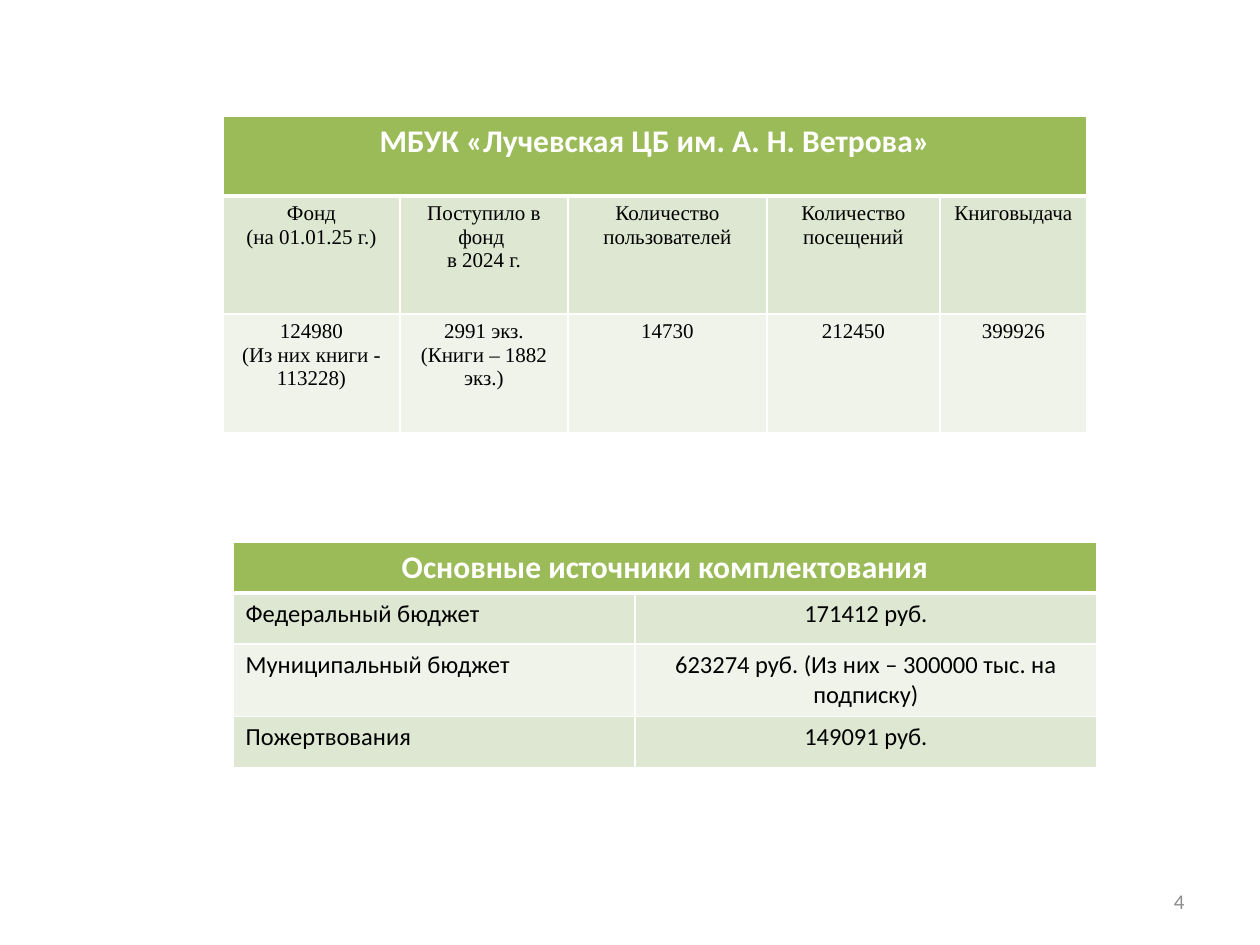
from lxml.etree import SubElement
from pptx import Presentation
from pptx.dml.color import RGBColor as RGB
from pptx.enum.text import MSO_ANCHOR as Anchor, PP_ALIGN as Align
from pptx.oxml.ns import qn
from pptx.util import Pt

PX = 914400 / 126
COLORS = {
    "header": "9BBB59", "odd": "DEE7D1", "even": "EFF3EA",
    "line": "FFFFFF", "light": "FFFFFF", "dark": "000000", "number": "8C8C8C",
}
HEADING = {"name": "Calibri", "size": Pt(18), "bold": True}
STATISTIC = {"name": "Times New Roman", "size": Pt(12), "bold": False}
SOURCE = {"name": "Calibri", "size": Pt(14), "bold": False}
NUMBER = {"name": "Calibri", "size": Pt(12), "bold": False}


def emu(px):
    return round(px * PX)


def write(frame, text, style, color, align):
    """Fill a text frame, one paragraph for each line of text."""
    for index, line in enumerate(text.split("\n")):
        paragraph = frame.add_paragraph() if index else frame.paragraphs[0]
        paragraph.alignment = align
        run = paragraph.add_run()
        run.text = line
        for key, value in style.items():
            setattr(run.font, key, value)
        run.font.color.rgb = RGB.from_string(COLORS[color])


def add_borders(cell, row):
    """White cell edges, with a thick rule under the heading row."""
    widths = {"L": 1, "R": 1, "T": 3 if row == 1 else 1, "B": 3 if row == 0 else 1}
    properties = cell._tc.get_or_add_tcPr()
    for place, (side, width) in enumerate(widths.items()):
        edge = SubElement(properties, qn(f"a:ln{side}"), w=str(Pt(width)))
        fill = SubElement(edge, qn("a:solidFill"))
        SubElement(fill, qn("a:srgbClr"), val=COLORS["line"])
        properties.insert(place, edge)


def add_banded_table(slide, box, widths, heights, heading, body, style, aligns):
    """Table with one merged heading row above banded rows."""
    table = slide.shapes.add_table(
        len(heights), len(widths), *map(emu, box)).table
    for column, width in zip(table.columns, widths):
        column.width = emu(width)
    for row, height in zip(table.rows, heights):
        row.height = emu(height)

    # Fills and edges
    for r in range(len(heights)):
        band = "header" if r == 0 else "odd" if r % 2 else "even"
        for c in range(len(widths)):
            cell = table.cell(r, c)
            cell.fill.solid()
            cell.fill.fore_color.rgb = RGB.from_string(COLORS[band])
            add_borders(cell, r)

    # Wording
    table.cell(0, 0).merge(table.cell(0, len(widths) - 1))
    write(table.cell(0, 0).text_frame, heading, HEADING, "light", Align.CENTER)
    for r, texts in enumerate(body, 1):
        for c, (text, align) in enumerate(zip(texts, aligns)):
            write(table.cell(r, c).text_frame, text, style, "dark", align)


def add_library_statistics(slide, box):
    body = [
        ["Фонд\n(на 01.01.25 г.)", "Поступило в фонд \nв 2024 г.",
         "Количество пользователей", "Количество\nпосещений", "Книговыдача"],
        ["124980\n(Из них книги - 113228)", "2991 экз.\n(Книги – 1882 экз.)",
         "14730", "212450", "399926"],
    ]
    add_banded_table(slide, box, [177, 168, 199, 173, 147], [80, 118, 119],
                     "МБУК «Лучевская ЦБ им. А. Н. Ветрова»", body,
                     STATISTIC, [Align.CENTER] * 5)


def add_funding_sources(slide, box):
    body = [
        ["Федеральный бюджет", "171412 руб."],
        ["Муниципальный бюджет", "623274 руб. (Из них – 300000 тыс. на подписку)"],
        ["Пожертвования", "149091 руб."],
    ]
    add_banded_table(slide, box, [402, 462], [51] * 4,
                     "Основные источники комплектования", body,
                     SOURCE, [Align.LEFT, Align.CENTER])


def add_slide_number(slide, box):
    frame = slide.shapes.add_textbox(*map(emu, box)).text_frame
    frame.word_wrap = True
    frame.vertical_anchor = Anchor.MIDDLE
    write(frame, "4", NUMBER, "number", Align.RIGHT)


def main():
    deck = Presentation()
    deck.slide_width, deck.slide_height = emu(1260), emu(945)
    slide = deck.slides.add_slide(deck.slide_layouts[6])
    add_library_statistics(slide, (223, 116, 864, 317))
    add_funding_sources(slide, (233, 542, 864, 204))
    add_slide_number(slide, (903, 876, 294, 50))
    deck.save("out.pptx")


if __name__ == "__main__":
    main()
